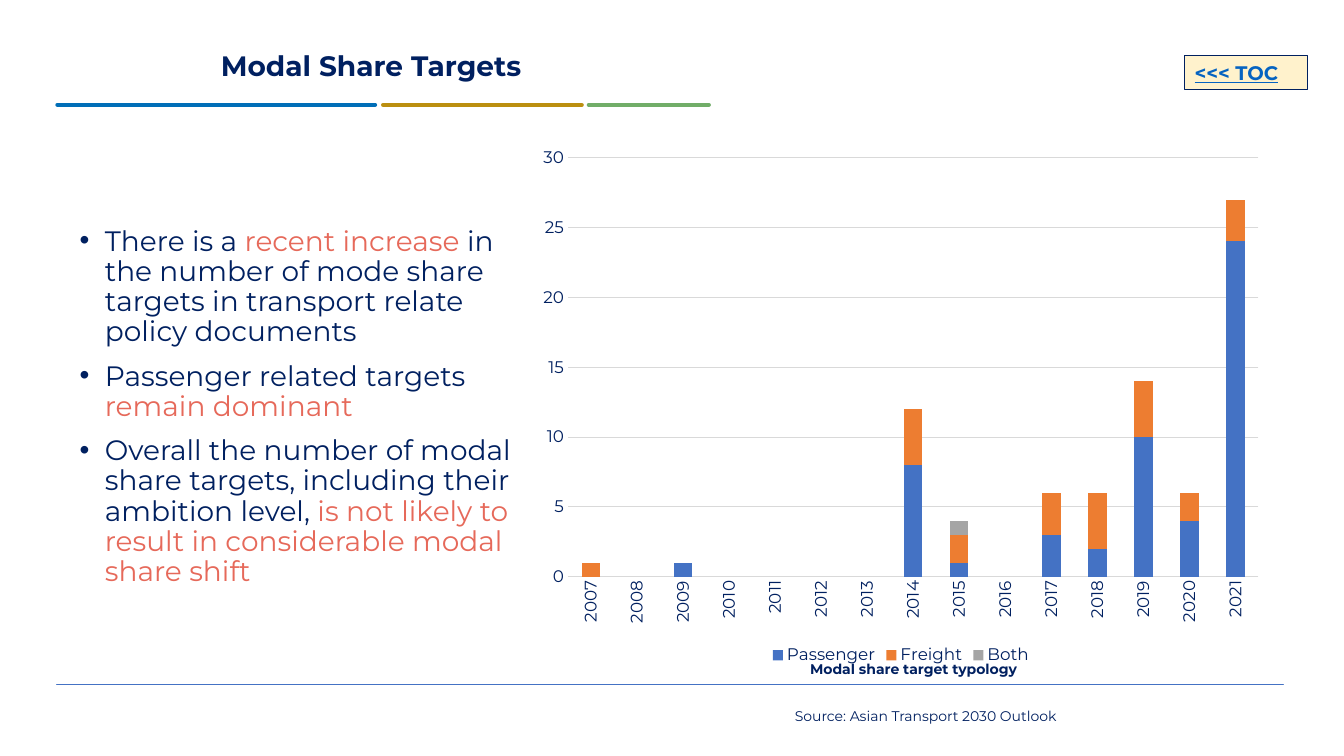
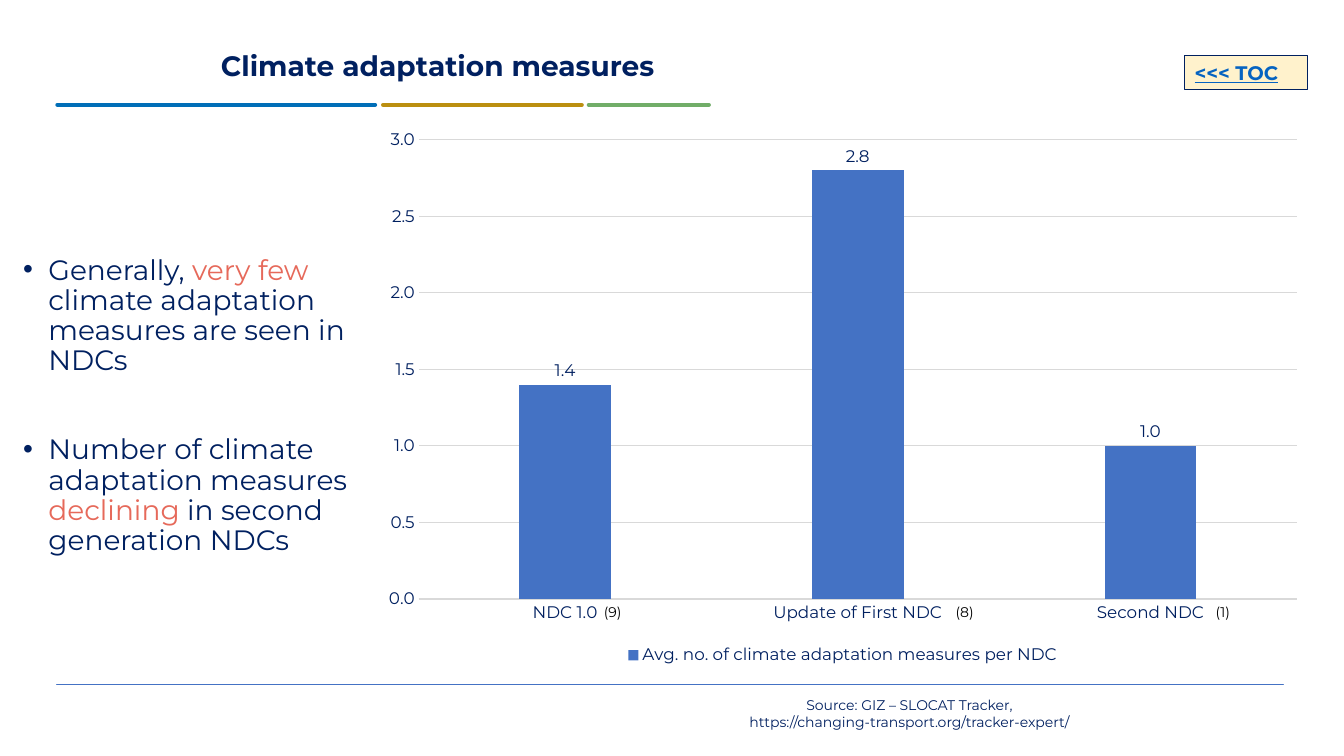
from lxml.etree import SubElement
from pptx import Presentation
from pptx.chart.data import CategoryChartData
from pptx.dml.color import RGBColor
from pptx.enum.chart import XL_CHART_TYPE, XL_LABEL_POSITION, XL_LEGEND_POSITION, XL_TICK_MARK
from pptx.enum.shapes import MSO_CONNECTOR, MSO_SHAPE
from pptx.enum.text import MSO_ANCHOR, MSO_AUTO_SIZE, PP_ALIGN
from pptx.oxml.ns import qn
from pptx.util import Inches, Pt

FONT = "Montserrat"
COLORS = {
    "navy": "002060", "accent": "E6695A", "black": "000000", "link": "0563C1",
    "cream": "FFF2CC", "grid": "D9D9D9", "blue": "4472C4", "orange": "ED7D31",
    "gray": "A5A5A5", "band_blue": "006EB7", "band_gold": "BB8F10", "band_green": "71AD68",
}
# start x, end x, y, colour, width in points
RULES = [
    (0.56, 12.73, 6.79, "blue", 0.5),
    (0.57, 3.72, 1.04, "band_blue", 3),
    (3.8, 5.77, 1.04, "band_gold", 3),
    (5.84, 7.03, 1.04, "band_green", 3),
]


def rgb(name):
    return RGBColor.from_string(COLORS[name])


def style_font(font, size, color="navy", bold=False):
    font.name = FONT
    font.size = Pt(size)
    font.bold = bold
    font.color.rgb = rgb(color)


def add_run(p, text, size, color="navy", bold=False):
    r = p.add_run()
    r.text = text
    style_font(r.font, size, color, bold)
    return r


def place(sp, left, top, width, height):
    sp.left, sp.top = Inches(left), Inches(top)
    sp.width, sp.height = Inches(width), Inches(height)


def set_up_layout(layout):
    title = layout.placeholders[0]
    place(title, 2.09, 0.24, 7.14, 0.86)
    title.text_frame.vertical_anchor = MSO_ANCHOR.MIDDLE
    title.text_frame.auto_size = MSO_AUTO_SIZE.NONE


def add_layout_rules(slide):
    """Draw the rules on a slide, then move them to its layout so all slides share them."""
    for number, (x1, x2, y, color, width) in enumerate(RULES, start=20):
        rule = slide.shapes.add_connector(
            MSO_CONNECTOR.STRAIGHT, Inches(x1), Inches(y), Inches(x2), Inches(y))
        rule.line.color.rgb = rgb(color)
        rule.line.width = Pt(width)
        element = rule._element
        element.spPr.find(qn("a:ln")).set("cap", "rnd")
        SubElement(element.spPr, qn("a:effectLst"))
        element.nvCxnSpPr.cNvPr.set("id", str(number))
        slide.slide_layout.shapes.element.append(element)


def add_title(slide, text):
    p = slide.shapes.title.text_frame.paragraphs[0]
    p.alignment = PP_ALIGN.LEFT
    p.line_spacing = 0.9
    add_run(p, text, 20, bold=True)


def add_bullets(slide, box, items, gap):
    """Fill the body; each item is a list of (text, colour) runs, gap is in points."""
    body = slide.placeholders[1]
    place(body, *box)
    tf = body.text_frame
    tf.auto_size = MSO_AUTO_SIZE.NONE
    tf.vertical_anchor = MSO_ANCHOR.MIDDLE
    for i, runs in enumerate(items):
        p = tf.add_paragraph() if i else tf.paragraphs[0]
        pPr = p._p.get_or_add_pPr()
        pPr.set("marL", str(Inches(0.25)))
        pPr.set("indent", str(Inches(-0.25)))
        p.line_spacing = 0.9
        p.space_before = Pt(gap if i else 0)
        for text, color in runs:
            add_run(p, text, 20, color)


def add_text(slide, box, text, color="navy", bold=False,
             align=PP_ALIGN.CENTER, anchor=MSO_ANCHOR.TOP):
    sp = slide.shapes.add_textbox(*map(Inches, box))
    tf = sp.text_frame
    tf.word_wrap = True
    tf.vertical_anchor = anchor
    p = tf.paragraphs[0]
    p.alignment = align
    add_run(p, text, 10, color, bold)


def add_source(slide, left, top, text):
    add_text(slide, (left, top, 4.5, 0.4), text, anchor=MSO_ANCHOR.MIDDLE)


def add_toc_button(slide):
    sp = slide.shapes.add_shape(
        MSO_SHAPE.RECTANGLE, Inches(11.75), Inches(0.55), Inches(1.22), Inches(0.34))
    sp.shadow.inherit = False
    sp.fill.solid()
    sp.fill.fore_color.rgb = rgb("cream")
    sp.line.color.rgb = rgb("navy")
    sp.line.width = Pt(0.75)
    p = sp.text_frame.paragraphs[0]
    p.alignment = PP_ALIGN.LEFT
    add_run(p, "<<< TOC", 14, "link", bold=True).font.underline = True


def style_axis(axis, line):
    axis.major_tick_mark = axis.minor_tick_mark = XL_TICK_MARK.NONE
    style_font(axis.tick_labels.font, 12)
    line.color.rgb = rgb("grid")
    line.width = Pt(0.75)


def add_column_chart(slide, box, kind, categories, series, top, step, gap, overlap,
                     number_format="General"):
    """Add a column chart; series holds (name, values, colour), top and step set the scale."""
    data = CategoryChartData()
    data.categories = categories
    for name, values, _ in series:
        data.add_series(name, values)
    chart = slide.shapes.add_chart(kind, *map(Inches, box), data).chart
    style_font(chart.font, 12)
    chart.has_title = False
    chart.has_legend = True
    chart.legend.position = XL_LEGEND_POSITION.BOTTOM
    chart.legend.include_in_layout = False
    style_font(chart.legend.font, 12)

    category_axis, value_axis = chart.category_axis, chart.value_axis
    style_axis(category_axis, category_axis.format.line)
    style_axis(value_axis, value_axis.major_gridlines.format.line)
    value_axis.format.line.fill.background()
    value_axis.minimum_scale, value_axis.maximum_scale = 0, top
    value_axis.major_unit = step
    value_axis.tick_labels.number_format = number_format
    value_axis.tick_labels.number_format_is_linked = False

    plot = chart.plots[0]
    plot.vary_by_categories = False
    plot.gap_width, plot.overlap = gap, overlap
    for drawn, (_, _, color) in zip(plot.series, series):
        drawn.format.fill.solid()
        drawn.format.fill.fore_color.rgb = rgb(color)
    return chart


def turn_category_labels(chart):
    body = chart.category_axis._element.find(qn("c:txPr")).find(qn("a:bodyPr"))
    body.set("rot", "-5400000")
    body.set("vert", "horz")


def show_values(chart, number_format):
    plot = chart.plots[0]
    plot.has_data_labels = True
    labels = plot.data_labels
    labels.show_value = True
    labels.position = XL_LABEL_POSITION.OUTSIDE_END
    labels.number_format = number_format
    labels.number_format_is_linked = False
    style_font(labels.font, 12)


def build_modal_share(slide):
    add_title(slide, "Modal Share Targets")
    add_bullets(slide, (0.69, 1.44, 4.72, 5.2), [
        [("There is a ", "navy"), ("recent increase", "accent"),
         (" in the number of mode share targets in transport relate policy documents", "navy")],
        [("Passenger related targets ", "navy"), ("remain dominant", "accent")],
        [("Overall the number of modal share targets, including their ambition level, ", "navy"),
         ("is not likely to result in considerable modal share shift", "accent")],
    ], gap=10)
    n = None
    chart = add_column_chart(
        slide, (5.24, 1.36, 7.39, 5.28), XL_CHART_TYPE.COLUMN_STACKED,
        [str(year) for year in range(2007, 2022)],
        [("Passenger", [0, n, 1, n, n, n, n, 8, 1, n, 3, 2, 10, 4, 24], "blue"),
         ("Freight", [1, n, 0, n, n, n, n, 4, 2, n, 3, 4, 4, 2, 3], "orange"),
         ("Both", [0, n, 0, n, n, n, n, 0, 1, n, 0, 0, 0, 0, 0], "gray")],
        top=30, step=5, gap=150, overlap=100)
    turn_category_labels(chart)
    add_source(slide, 6.93, 6.9, "Source: Asian Transport 2030 Outlook")
    add_text(slide, (5.73, 6.5, 6.66, 0.27), "Modal share target typology", bold=True)
    add_toc_button(slide)


def build_climate_adaptation(slide):
    add_title(slide, "Climate adaptation measures")
    add_bullets(slide, (0.13, 1.29, 4.07, 5.48), [
        [("Generally, ", "navy"), ("very few", "accent"),
         (" climate adaptation measures are seen in NDCs", "navy")],
        [("Number of climate adaptation measures ", "navy"), ("declining", "accent"),
         (" in second generation NDCs", "navy")],
    ], gap=42)
    chart = add_column_chart(
        slide, (3.67, 1.18, 9.38, 5.46), XL_CHART_TYPE.COLUMN_CLUSTERED,
        ["NDC 1.0", "Update of First NDC", "Second NDC"],
        [("Avg. no. of climate adaptation measures per NDC", [1.4, 2.8, 1], "blue")],
        top=3, step=0.5, gap=219, overlap=-27, number_format="0.0")
    show_values(chart, "0.0")
    for left, count in ((5.89, 9), (9.38, 8), (11.96, 1)):
        add_text(slide, (left, 5.94, 0.56, 0.27), f"({count})", "black", align=PP_ALIGN.LEFT)
    add_source(slide, 6.77, 6.88,
               "Source: GIZ – SLOCAT Tracker, https://changing-transport.org/tracker-expert/")
    add_toc_button(slide)


def main():
    prs = Presentation()
    prs.slide_width, prs.slide_height = Inches(13.33), Inches(7.5)
    layout = prs.slide_layouts[1]
    set_up_layout(layout)
    for build in (build_modal_share, build_climate_adaptation):
        build(prs.slides.add_slide(layout))
    add_layout_rules(prs.slides[0])
    prs.save("out.pptx")


if __name__ == "__main__":
    main()
